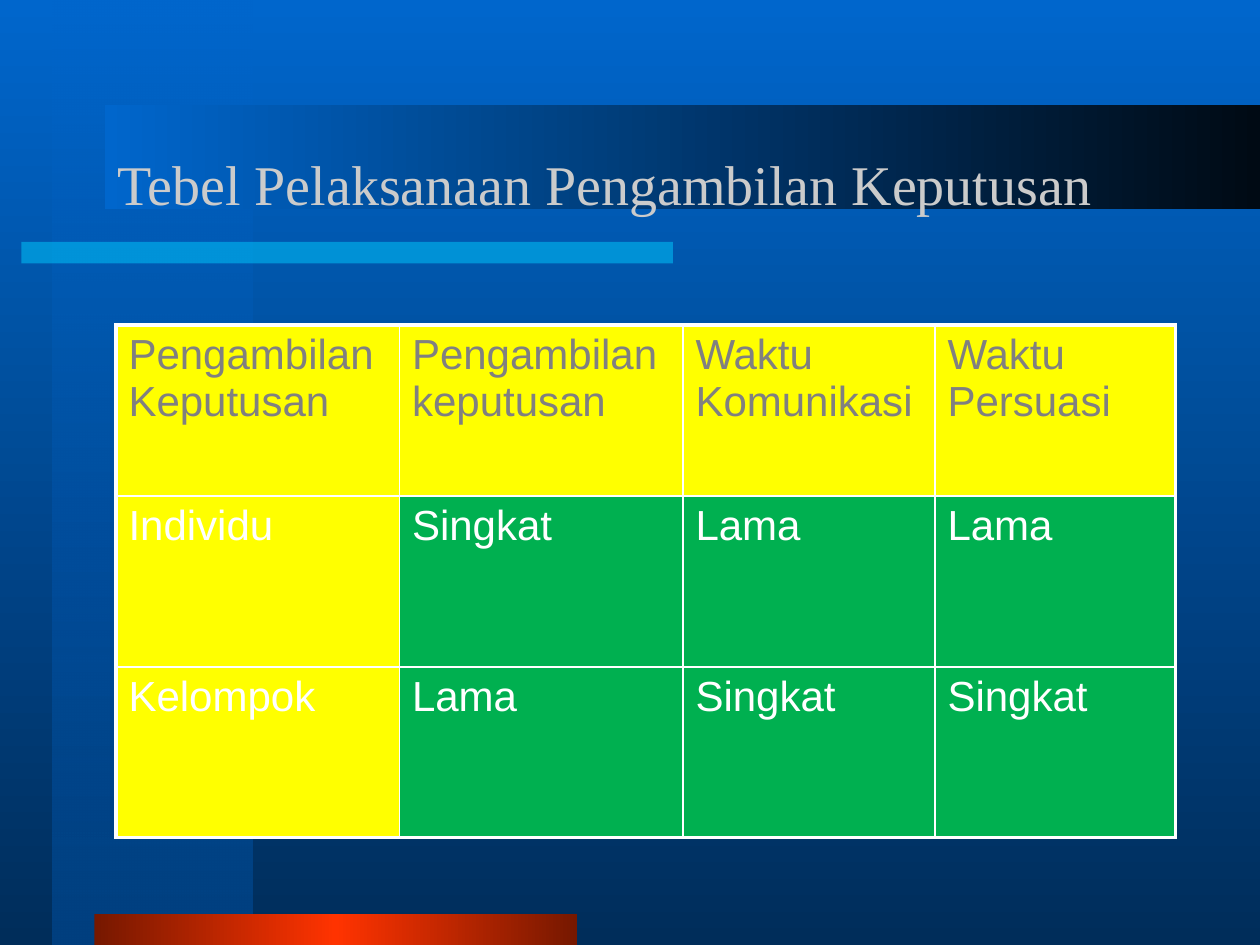
from lxml import etree
from pptx import Presentation
from pptx.dml.color import RGBColor
from pptx.enum.shapes import MSO_SHAPE
from pptx.enum.text import MSO_ANCHOR, PP_ALIGN
from pptx.oxml.ns import qn
from pptx.util import Inches, Pt

RECTANGLE = MSO_SHAPE.RECTANGLE
MIDDLE = MSO_ANCHOR.MIDDLE
LEFT = PP_ALIGN.LEFT

TITLE = "Tebel Pelaksanaan Pengambilan Keputusan"
ROWS = [
    ["Pengambilan Keputusan", "Pengambilan keputusan", "Waktu Komunikasi", "Waktu Persuasi"],
    ["Individu", "Singkat", "Lama", "Lama"],
    ["Kelompok", "Lama", "Singkat", "Singkat"],
]
COLUMN_WIDTHS = [2.25, 2.25, 2, 1.91]
BLUE, WHITE, GRAY = "0066CC", "FFFFFF", "808080"
YELLOW, GREEN = "FFFF00", "00B050"
DOWN, ACROSS = 270, 0


def color(hex_string):
    return RGBColor.from_string(hex_string)


def add_color(parent, hex_string, alpha=None):
    """Append a colour, with its opacity in percent, to a fill element."""
    element = etree.SubElement(parent, qn("a:srgbClr"), val=hex_string)
    if alpha is not None:
        etree.SubElement(element, qn("a:alpha"), val=str(alpha * 1000))


def set_gradient(fill, owner, stops, angle):
    """Give fill, found inside the owner element, stops of (percent, colour[, alpha])."""
    fill.gradient()
    fill.gradient_angle = angle
    stop_list = owner.find(".//" + qn("a:gsLst"))
    for old_stop in list(stop_list):
        stop_list.remove(old_stop)
    for position, *color_parts in stops:
        stop = etree.SubElement(stop_list, qn("a:gs"), pos=str(position * 1000))
        add_color(stop, *color_parts)


def write_text(text_frame, text, *, font, size, text_color):
    paragraph = text_frame.paragraphs[0]
    paragraph.alignment = LEFT
    run = paragraph.add_run()
    run.text = text
    run.font.name = font
    run.font.size = Pt(size)
    run.font.color.rgb = color(text_color)


def add_band(slide, left, top, width, height):
    band = slide.shapes.add_shape(
        RECTANGLE, Inches(left), Inches(top), Inches(width), Inches(height))
    band.shadow.inherit = False
    band.line.fill.background()
    return band


def add_backdrop(slide, width, height):
    set_gradient(slide.background.fill, slide.element,
                 [(0, BLUE), (100, "002D5A")], DOWN)

    column = add_band(slide, 0.42, 0, 1.58, height)
    set_gradient(column.fill, column.element,
                 [(0, BLUE, 50), (100, "004080")], DOWN)

    accent = add_band(slide, 0.17, 1.92, 5.17, 0.17)
    accent.fill.solid()
    accent.fill.fore_color.rgb = color("00CCFF")
    accent_color = accent.element.spPr.find(".//" + qn("a:srgbClr"))
    etree.SubElement(accent_color, qn("a:alpha"), val="50000")

    footer = add_band(slide, 0.75, height - 0.25, 3.83, 0.25)
    set_gradient(footer.fill, footer.element,
                 [(0, "761800"), (50, "FF3300"), (100, "761800")], ACROSS)

    title_band = add_band(slide, 0.83, 0.83, width - 0.83, 0.83)
    set_gradient(title_band.fill, title_band.element,
                 [(0, BLUE), (100, "000A14")], ACROSS)


def place_title(slide, left, top, width, height):
    title = slide.shapes.title
    title.left, title.top = Inches(left), Inches(top)
    title.width, title.height = Inches(width), Inches(height)
    title.text_frame.vertical_anchor = MIDDLE
    write_text(title.text_frame, TITLE, font="Times New Roman", size=32, text_color="CBCBCB")
    # The title belongs in front of the bands
    title.element.getparent().append(title.element)


def set_borders(cell, widths):
    """Draw white borders; widths maps each side's tag to points."""
    properties = cell._tc.get_or_add_tcPr()
    for index, (side, width) in enumerate(widths.items()):
        line = etree.Element(qn(f"a:{side}"), w=str(Pt(width)))
        add_color(etree.SubElement(line, qn("a:solidFill")), WHITE)
        properties.insert(index, line)


def add_decision_table(slide, left, top, width, height):
    row_count, column_count = len(ROWS), len(COLUMN_WIDTHS)
    table = slide.shapes.add_table(
        row_count, column_count,
        Inches(left), Inches(top), Inches(width), Inches(height)).table
    for column, column_width in zip(table.columns, COLUMN_WIDTHS):
        column.width = Inches(column_width)
    for row_index, texts in enumerate(ROWS):
        for column_index, text in enumerate(texts):
            cell = table.cell(row_index, column_index)
            is_label = row_index == 0 or column_index == 0
            cell.fill.solid()
            cell.fill.fore_color.rgb = color(YELLOW if is_label else GREEN)
            write_text(cell.text_frame, text, font="Arial", size=24,
                       text_color=GRAY if row_index == 0 else WHITE)
            outer_sides = {
                "lnL": column_index == 0,
                "lnR": column_index == column_count - 1,
                "lnT": row_index == 0,
                "lnB": row_index == row_count - 1,
            }
            set_borders(cell, {side: 2.25 if is_outer else 1
                               for side, is_outer in outer_sides.items()})


def main():
    presentation = Presentation()
    presentation.slide_width, presentation.slide_height = Inches(10), Inches(7.5)
    slide = presentation.slides.add_slide(presentation.slide_layouts[5])
    add_backdrop(slide, 10, 7.5)
    place_title(slide, 0.83, 0.83, 8.67, 1.25)
    add_decision_table(slide, 0.92, 2.58, sum(COLUMN_WIDTHS), 4.07)
    presentation.save("out.pptx")


if __name__ == "__main__":
    main()
